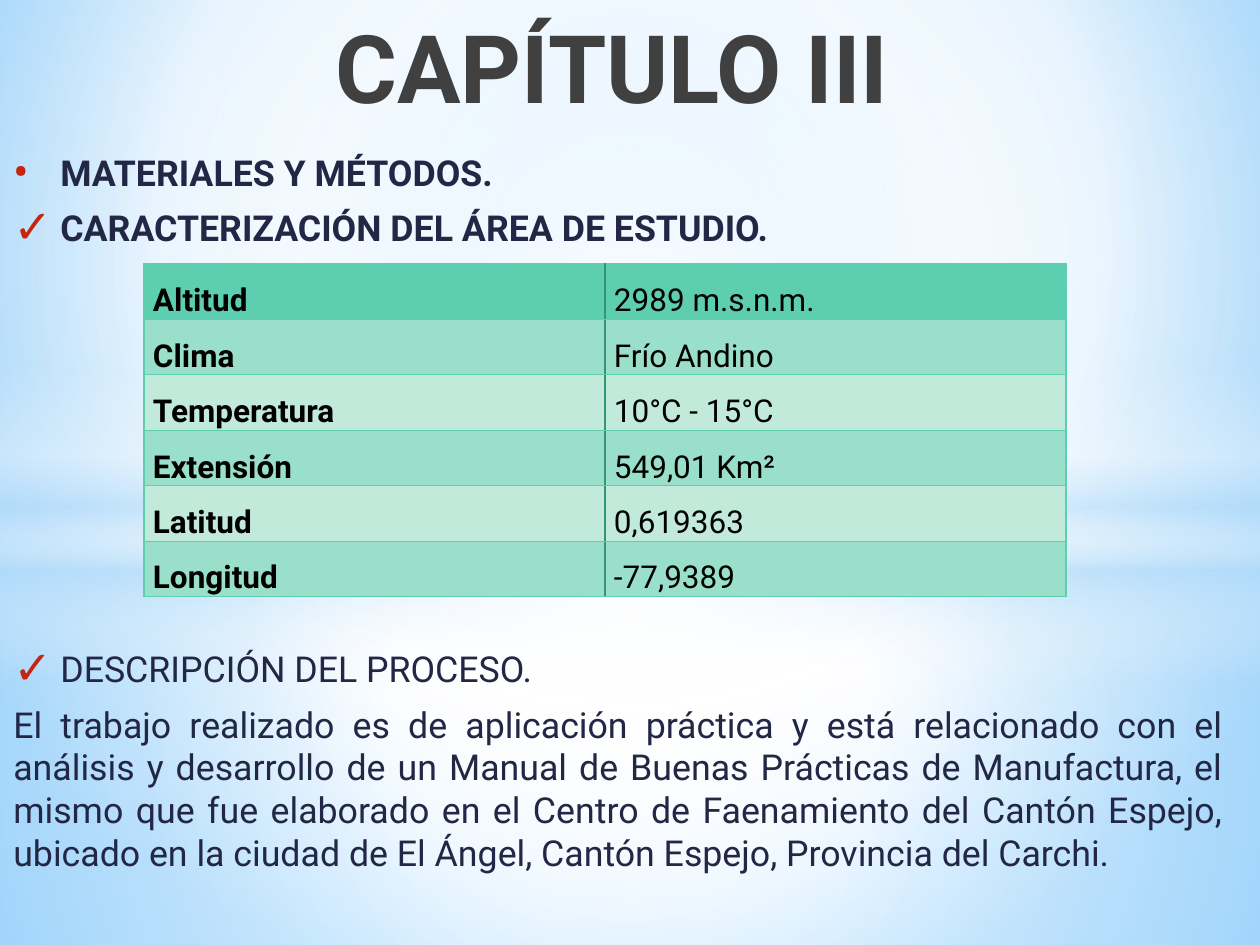
from lxml import etree
from pptx import Presentation
from pptx import util as u
from pptx.dml.color import RGBColor
from pptx.enum import shapes, text
from pptx.oxml.ns import qn

PX = 914400 / 126
FONT = "Roboto"
WHITE = RGBColor(0xFF, 0xFF, 0xFF)
BLACK = RGBColor(0x00, 0x00, 0x00)
SKY = RGBColor(0x9E, 0xD5, 0xFF)
DEEP_SKY = RGBColor(0x5B, 0xB9, 0xFF)
PALE_BLUE = RGBColor(0xB4, 0xDC, 0xFA)
TITLE_GREY = RGBColor(0x40, 0x40, 0x40)
NAVY = RGBColor(0x21, 0x27, 0x45)
RED = RGBColor(0xC3, 0x26, 0x0C)
MINT = RGBColor(0x5D, 0xCE, 0xAF)
MID_MINT = RGBColor(0x9A, 0xDF, 0xCA)
LIGHT_MINT = RGBColor(0xC1, 0xEA, 0xDB)
GREEN = RGBColor(0x31, 0x95, 0x7A)
GREY = RGBColor(0xA9, 0xA9, 0xA9)

CENTRE = (50, 50, 50, 50)
AREA_FACTS = [
    ("Altitud", "2989 m.s.n.m."),
    ("Clima", "Frío Andino"),
    ("Temperatura", "10°C - 15°C"),
    ("Extensión", "549,01 Km²"),
    ("Latitud", "0,619363"),
    ("Longitud", "-77,9389"),
]
# text, bullet, bold, space before in points
BODY = [
    ("MATERIALES Y MÉTODOS.", "•", True, 0),
    ("CARACTERIZACIÓN DEL ÁREA DE ESTUDIO.", "✓", True, 4),
    ("DESCRIPCIÓN DEL PROCESO.", "✓", False, 224.5),
    ("El trabajo realizado es de aplicación práctica y está relacionado con "
     "el análisis y desarrollo de un Manual de Buenas Prácticas de "
     "Manufactura, el mismo que fue elaborado en el Centro de Faenamiento "
     "del Cantón Espejo, ubicado en la ciudad de El Ángel, Cantón Espejo, "
     "Provincia del Carchi.", None, False, 4),
]


def px(n):
    return u.Emu(round(n * PX))


def sub(parent, tag, **attrs):
    return etree.SubElement(parent, qn(tag), {k: str(v) for k, v in attrs.items()})


def add_colour(parent, colour, alpha=100):
    clr = sub(parent, "a:srgbClr", val=colour)
    if alpha < 100:
        sub(clr, "a:alpha", val=alpha * 1000)


def set_gradient(owner, stops, focus=None):
    """Swap the solid fill in owner for a radial gradient, or a vertical one without focus."""
    grad = etree.Element(qn("a:gradFill"), rotWithShape="1")
    stop_list = sub(grad, "a:gsLst")
    for pos, colour, alpha in stops:
        add_colour(sub(stop_list, "a:gs", pos=pos * 1000), colour, alpha)
    if focus:
        path = sub(grad, "a:path", path="circle")
        sub(path, "a:fillToRect", **{k: v * 1000 for k, v in zip("ltrb", focus)})
    else:
        sub(grad, "a:lin", ang=90 * 60000, scaled=0)
    solid = owner.find(qn("a:solidFill"))
    owner.replace(solid, grad)


def add_glow(s, kind, box, stops, focus=None):
    sp = s.shapes.add_shape(kind, *map(px, box))
    sp.shadow.inherit = False
    sp.line.fill.background()
    sp.fill.solid()
    set_gradient(sp.element.spPr, stops, focus)


def add_backdrop(s, box):
    x, y, w, h = box
    horizon = 533
    rect, oval = shapes.MSO_SHAPE.RECTANGLE, shapes.MSO_SHAPE.OVAL
    s.background.fill.solid()
    set_gradient(s.element.xpath(".//p:bgPr")[0],
                 [(0, SKY, 100), (60, WHITE, 100), (100, DEEP_SKY, 100)],
                 (20, 10, 20, 60))
    add_glow(s, rect, (x, y + horizon, w, h - horizon),
             [(0, WHITE, 91), (37, WHITE, 76), (100, PALE_BLUE, 79)], CENTRE)
    add_glow(s, rect, (x, y, w, horizon),
             [(0, WHITE, 89), (48, WHITE, 62), (100, PALE_BLUE, 79)], CENTRE)
    add_glow(s, rect, (x, y + 365, w, 315),
             [(0, WHITE, 0), (29, WHITE, 30), (45, PALE_BLUE, 40),
              (55, WHITE, 26), (65, PALE_BLUE, 60), (100, WHITE, 0)])
    add_glow(s, oval, (x, y + 220, w, 703),
             [(0, WHITE, 100), (54, WHITE, 0)], CENTRE)


def format_runs(p, size, colour, bold):
    for r in p.runs:
        r.font.name = FONT
        r.font.size = u.Pt(size)
        r.font.bold = bold
        r.font.color.rgb = colour


def place_title(s, box):
    sp = s.shapes.title
    s.shapes.element.append(sp.element)  # in front of the backdrop
    sp.left, sp.top, sp.width, sp.height = map(px, box)
    tf = sp.text_frame
    tf.text = "CAPÍTULO III"
    tf.vertical_anchor = text.MSO_ANCHOR.TOP
    p = tf.paragraphs[0]
    p.alignment = text.PP_ALIGN.CENTER
    p._p.get_or_add_pPr().set("marL", str(px(25)))
    format_runs(p, 54, TITLE_GREY, True)


def add_bullet(p, char):
    pPr = p._p.get_or_add_pPr()
    pPr.set("marL", str(px(47)))
    pPr.set("indent", str(px(-47)))
    add_colour(sub(pPr, "a:buClr"), RED)
    sub(pPr, "a:buSzPct", val=130000)
    sub(pPr, "a:buFont", typeface=FONT)
    sub(pPr, "a:buChar", char=char)


def add_body(s, box):
    tf = s.shapes.add_textbox(*map(px, box)).text_frame
    tf.word_wrap = True
    for i, (words, bullet, bold, before) in enumerate(BODY):
        p = tf.add_paragraph() if i else tf.paragraphs[0]
        p.text = words
        p.alignment = text.PP_ALIGN.JUSTIFY
        p.space_before, p.space_after = u.Pt(before), u.Pt(3)
        if bullet:
            add_bullet(p, bullet)
        format_runs(p, 20.4, NAVY, bold)


def set_borders(cell, **sides):
    """Draw the L, R, T and B borders, each a (colour, points) pair."""
    tcPr = cell._tc.get_or_add_tcPr()
    for side in "LRTB":
        colour, width = sides[side]
        ln = sub(tcPr, f"a:ln{side}", w=u.Pt(width))
        add_colour(sub(ln, "a:solidFill"), colour)


def add_facts_table(s, box):
    x, y, w, h = box
    rows = len(AREA_FACTS)
    table = s.shapes.add_table(rows, 2, *map(px, box)).table
    table.first_row = table.horz_banding = False
    thin, divider, under_head = (MINT, 0.75), (GREEN, 1.25), (GREY, 1.25)
    for col in table.columns:
        col.width = px(w / 2)
    for i, facts in enumerate(AREA_FACTS):
        table.rows[i].height = px(h / rows)
        for j, words in enumerate(facts):
            cell = table.cell(i, j)
            set_borders(cell,
                        L=divider if j else thin,
                        R=thin if j else divider,
                        T=under_head if i == 1 else thin,
                        B=under_head if i == 0 else thin)
            cell.fill.solid()
            band = MID_MINT if i % 2 else LIGHT_MINT
            cell.fill.fore_color.rgb = band if i else MINT
            cell.margin_left = cell.margin_right = px(9)
            cell.margin_top = cell.margin_bottom = 0
            p = cell.text_frame.paragraphs[0]
            p.text = words
            p.alignment = text.PP_ALIGN.JUSTIFY
            p.line_spacing = 1.5
            format_runs(p, 18, BLACK, j == 0)


def main():
    prs = Presentation()
    prs.slide_width, prs.slide_height = px(1260), px(945)
    s = prs.slides.add_slide(prs.slide_layouts[5])
    add_backdrop(s, (0, 0, 1260, 945))
    add_body(s, (1, 145, 1234, 784))
    place_title(s, (105, 3, 989, 150))
    add_facts_table(s, (144, 264, 922, 333))
    prs.save("out.pptx")


if __name__ == "__main__":
    main()
